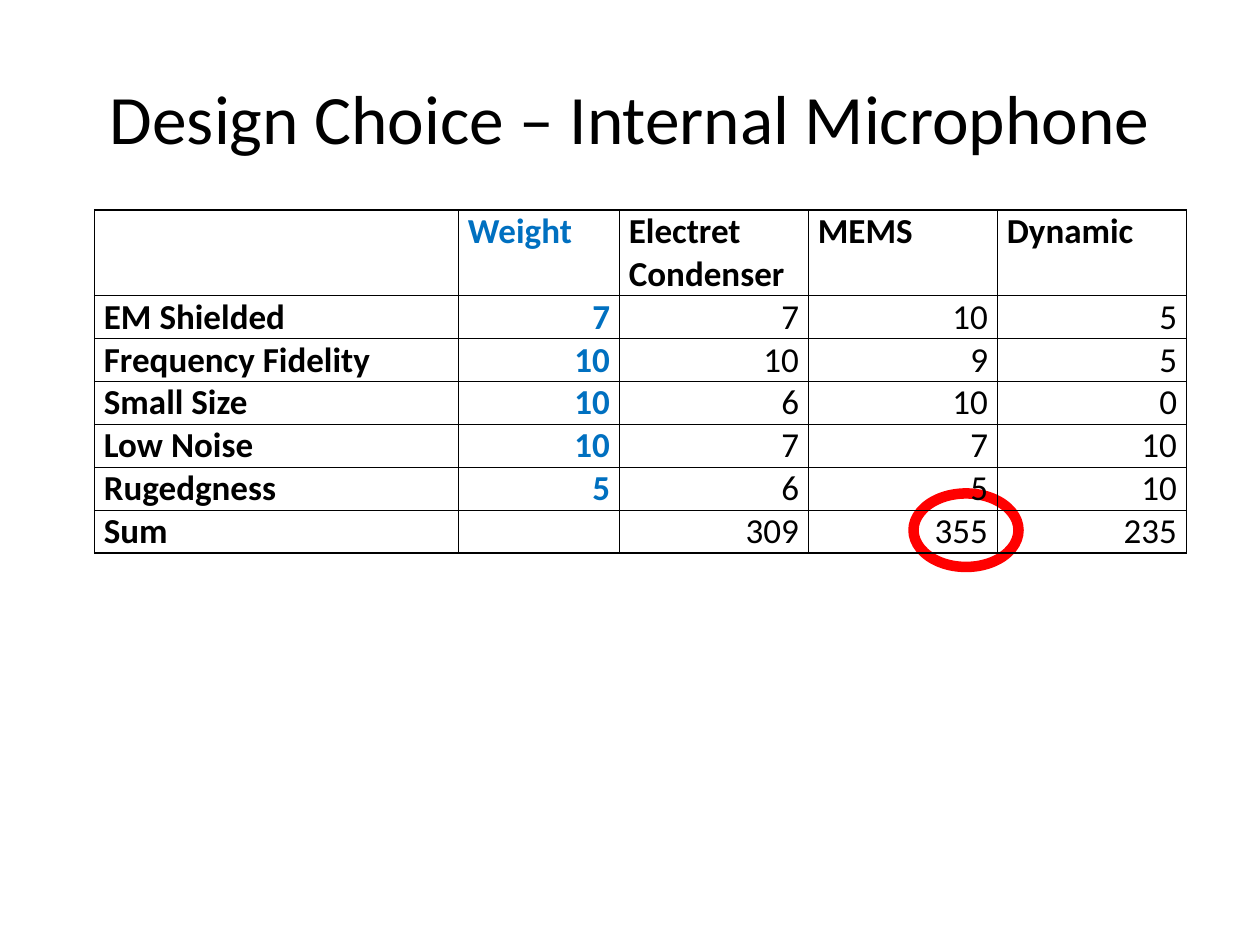
from dataclasses import dataclass

from lxml import etree
from pptx import Presentation
from pptx.dml.color import RGBColor
from pptx.enum import shapes, text
from pptx.oxml.ns import qn
from pptx.util import Pt

COLORS = {"text": "000000", "weight": "0070C0", "border": "000000", "highlight": "FF0000"}
FONT = "Calibri"
COLUMN_WIDTHS = [208, 92, 108, 108, 108]
HEADER_HEIGHT, ROW_HEIGHT = 48, 24
WEIGHT_COLUMN = 1


@dataclass
class Criterion:
    name: str
    values: list[str]  # weight, then one score per microphone


HEADERS = ["", "Weight", "Electret Condenser", "MEMS", "Dynamic"]
CRITERIA = [
    Criterion("EM Shielded", ["7", "7", "10", "5"]),
    Criterion("Frequency Fidelity", ["10", "10", "9", "5"]),
    Criterion("Small Size", ["10", "6", "10", "0"]),
    Criterion("Low Noise", ["10", "7", "7", "10"]),
    Criterion("Rugedgness", ["5", "6", "5", "10"]),
    Criterion("Sum", ["", "309", "355", "235"]),
]


def style_paragraph(paragraph, size: float, color: str, bold: bool, alignment) -> None:
    paragraph.alignment = alignment
    font = paragraph.font
    font.name, font.size, font.bold = FONT, Pt(size), bold
    font.color.rgb = RGBColor.from_string(COLORS[color])


def add_borders(cell) -> None:
    properties = cell._tc.get_or_add_tcPr()
    for index, side in enumerate(("lnL", "lnR", "lnT", "lnB")):
        line = etree.Element(qn(f"a:{side}"), w=str(Pt(1)))
        fill = etree.SubElement(line, qn("a:solidFill"))
        etree.SubElement(fill, qn("a:srgbClr"), val=COLORS["border"])
        properties.insert(index, line)


def add_title(slide, title: str) -> None:
    shape = slide.shapes.title
    shape.left, shape.top, shape.width, shape.height = Pt(36), Pt(21.6), Pt(648), Pt(90)
    frame = shape.text_frame
    frame.text = title
    frame.vertical_anchor = text.MSO_ANCHOR.MIDDLE
    style_paragraph(frame.paragraphs[0], 39.6, "text", False, text.PP_ALIGN.CENTER)


def add_winner_ring(slide) -> None:
    ring = slide.shapes.add_shape(
        shapes.MSO_SHAPE.OVAL, Pt(522), Pt(282), Pt(60), Pt(42))
    ring.shadow.inherit = False
    ring.fill.background()
    ring.line.color.rgb = RGBColor.from_string(COLORS["highlight"])
    ring.line.width = Pt(6)


def fill_cell(cell, content: str, row: int, column: int) -> None:
    is_score = row > 0 and column > WEIGHT_COLUMN
    is_number = row > 0 and column >= WEIGHT_COLUMN
    cell.text = content
    cell.margin_left = cell.margin_right = Pt(5.4)
    cell.margin_top = cell.margin_bottom = 0
    if is_score and row == len(CRITERIA):
        cell.vertical_anchor = text.MSO_ANCHOR.BOTTOM
    cell.fill.background()
    add_borders(cell)
    style_paragraph(
        cell.text_frame.paragraphs[0], 20,
        "weight" if column == WEIGHT_COLUMN else "text", not is_score,
        text.PP_ALIGN.RIGHT if is_number else text.PP_ALIGN.LEFT)


def add_decision_table(slide) -> None:
    rows = [HEADERS] + [[criterion.name, *criterion.values] for criterion in CRITERIA]
    table = slide.shapes.add_table(
        len(rows), len(HEADERS), Pt(54), Pt(120), Pt(sum(COLUMN_WIDTHS)),
        Pt(HEADER_HEIGHT + ROW_HEIGHT * len(CRITERIA))).table
    table.first_row = table.horz_banding = False
    for column, width in zip(table.columns, COLUMN_WIDTHS):
        column.width = Pt(width)
    for row_index, contents in enumerate(rows):
        table.rows[row_index].height = Pt(ROW_HEIGHT if row_index else HEADER_HEIGHT)
        for column_index, content in enumerate(contents):
            fill_cell(table.cell(row_index, column_index), content, row_index, column_index)


def main() -> None:
    presentation = Presentation()
    presentation.slide_width, presentation.slide_height = Pt(720), Pt(540)
    slide = presentation.slides.add_slide(presentation.slide_layouts[5])
    add_title(slide, "Design Choice – Internal Microphone")
    add_winner_ring(slide)
    add_decision_table(slide)
    presentation.save("out.pptx")


if __name__ == "__main__":
    main()
